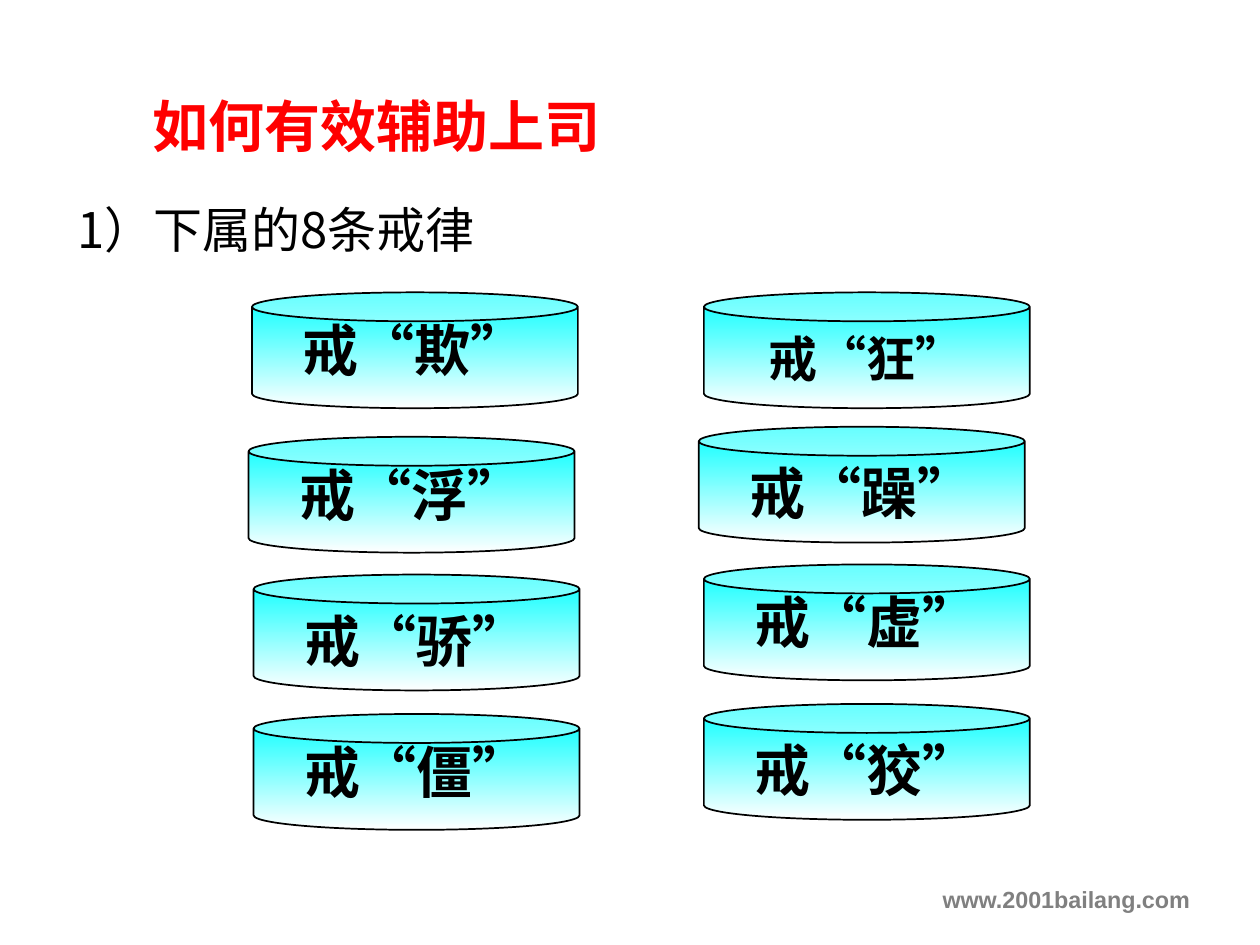
import pptx
import pptx.util
import pptx.dml.color
import pptx.enum.lang
import pptx.enum.shapes
import pptx.enum.text
import lxml.etree
from pptx.oxml.ns import qn

Inches = pptx.util.Inches
ALIGN = pptx.enum.text.PP_ALIGN
COLORS = {"black": "000000", "red": "FF0000", "gray": "808080", "cyan": "00FFFF", "white": "FFFFFF"}
CJK_FONT = "Noto Sans CJK SC"


def rgb(name):
    return pptx.dml.color.RGBColor.from_string(COLORS[name])


def write(shape, text, size, color, align, frame_format, bold=True, font_name=CJK_FONT):
    frame = shape.text_frame
    frame_settings = {
        "auto_size": pptx.enum.text.MSO_AUTO_SIZE.NONE,
        "vertical_anchor": pptx.enum.text.MSO_ANCHOR.MIDDLE,
        "word_wrap": True,
    } | frame_format
    for name, value in frame_settings.items():
        setattr(frame, name, value)
    para = frame.paragraphs[0]
    para.alignment = align
    span = para.add_run()
    span.text = text
    font_format = {"name": font_name, "size": pptx.util.Pt(size), "bold": bold}
    if font_name == CJK_FONT:
        font_format["language_id"] = pptx.enum.lang.MSO_LANGUAGE_ID.SIMPLIFIED_CHINESE
    for name, value in font_format.items():
        setattr(span.font, name, value)
    span.font.color.rgb = rgb(color)
    east_asian = lxml.etree.SubElement(span.font._element, qn("a:ea"))
    east_asian.set("typeface", font_name)


deck = pptx.Presentation()
deck.slide_width = Inches(7.5)
deck.slide_height = Inches(7.5 * 3 / 4)
page = deck.slides.add_slide(deck.slide_layouts[5])

website = page.shapes.add_textbox(Inches(0), Inches(5.22), Inches(7.18), Inches(0.26))
write(website, "www.2001bailang.com", 10, "gray", ALIGN.RIGHT, {}, font_name="Arial")

title = page.shapes.title
title_place = {"left": 0.36, "top": 1.09, "width": 5.55, "height": 0.55}
for name, value in title_place.items():
    setattr(title, name, Inches(value))
write(title, "1）下属的8条戒律", 21, "black", ALIGN.LEFT, {}, bold=False)

precepts = [
    ("欺", 1.5, 1.74, 24, 0.1),
    ("狂", 4.19, 1.74, 21, 0),
    ("浮", 1.48, 2.6, 24, 0.1),
    ("躁", 4.16, 2.54, 24, 0),
    ("骄", 1.51, 3.42, 24, 0),
    ("虚", 4.19, 3.36, 24, 0.1),
    ("狡", 4.19, 4.19, 24, 0),
    ("僵", 1.51, 4.25, 24, 0.1),
]
for fault, left, top, size, bottom_margin in precepts:
    can = page.shapes.add_shape(
        pptx.enum.shapes.MSO_SHAPE.CAN, Inches(left), Inches(top), Inches(1.94), Inches(0.69))
    can.shadow.inherit = False
    can.adjustments[0] = 0.25
    can.fill.gradient()
    can.fill.gradient_angle = 270
    for stop, color in zip(can.fill.gradient_stops, ("cyan", "white")):
        stop.color.rgb = rgb(color)
    can.line.color.rgb = rgb("black")
    can.line.width = pptx.util.Pt(0.75)
    write(can, f"戒“{fault}”", size, "black", ALIGN.CENTER,
          {"word_wrap": False, "margin_top": 0, "margin_bottom": Inches(bottom_margin)})

heading = page.shapes.add_textbox(Inches(0.84), Inches(0.51), Inches(3.01), Inches(0.47))
margins = {"margin_left": 0.07, "margin_right": 0.07, "margin_top": 0.04, "margin_bottom": 0.04}
write(heading, "如何有效辅助上司", 24, "red", ALIGN.LEFT,
      {name: Inches(value) for name, value in margins.items()})

deck.save("out.pptx")
